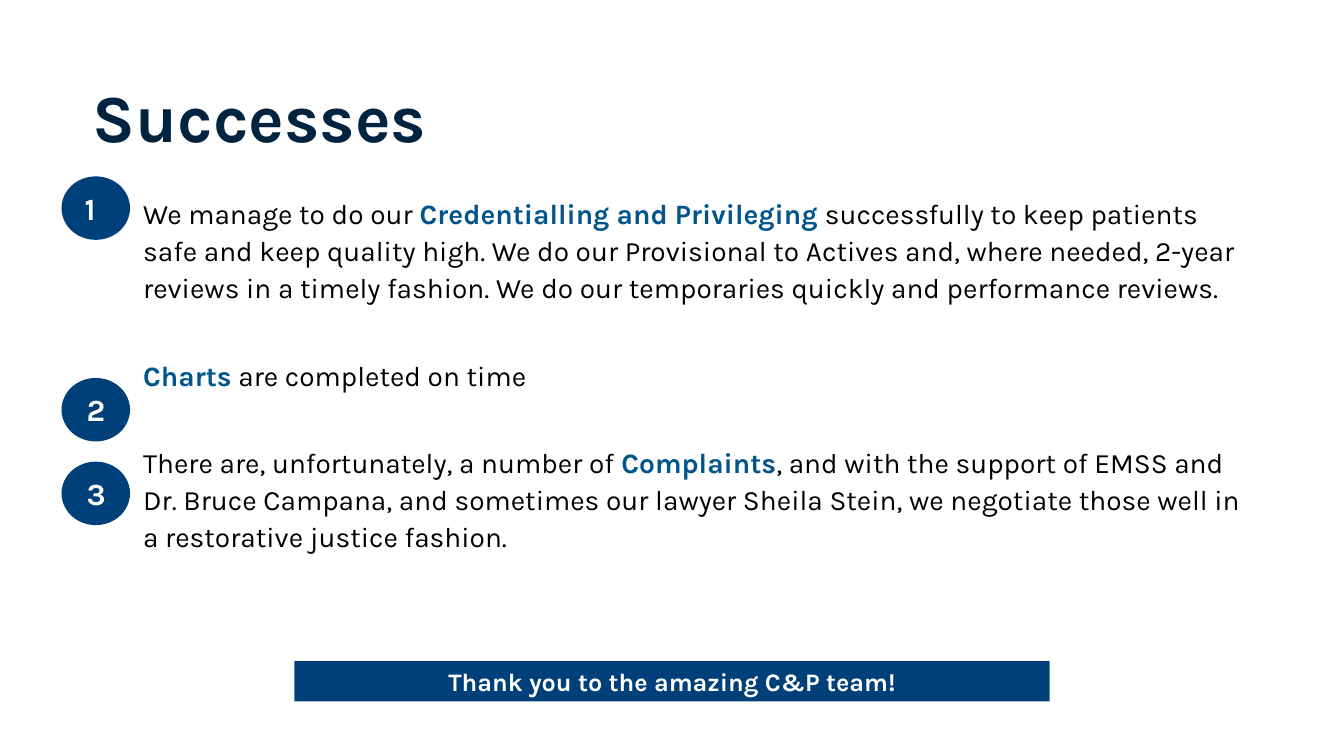
from pptx import Presentation
from pptx.dml.color import RGBColor
from pptx.enum.shapes import MSO_SHAPE
from pptx.enum.text import MSO_ANCHOR, MSO_AUTO_SIZE, PP_ALIGN
from pptx.util import Inches, Pt

RECT, OVAL = MSO_SHAPE.RECTANGLE, MSO_SHAPE.OVAL
TOP, MIDDLE, BOTTOM = MSO_ANCHOR.TOP, MSO_ANCHOR.MIDDLE, MSO_ANCHOR.BOTTOM
LEFT, CENTER = PP_ALIGN.LEFT, PP_ALIGN.CENTER
NO_AUTOFIT = MSO_AUTO_SIZE.NONE

FONT = "Karla"
NAVY, BLUE, INK = "00407A", "00558C", "002440"
BLACK, WHITE = "000000", "FFFFFF"

# Each paragraph is a list of (text, highlighted) runs
SUCCESSES = [
    [("We manage to do our ", False),
     ("Credentialling and Privileging", True),
     (" successfully to keep patients safe and keep quality high. "
      "We do our Provisional to Actives and, where needed, 2-year reviews "
      "in a timely fashion. We do our temporaries quickly and performance "
      "reviews.", False)],
    [("Charts", True), (" are completed on time", False)],
    [("There are, unfortunately, a number of ", False),
     ("Complaints", True),
     (", and with the support of EMSS and Dr. Bruce Campana, and sometimes "
      "our lawyer Sheila Stein, we negotiate those well in a restorative "
      "justice fashion.", False)],
]
# Number, top of its circle, left of its text
BADGES = [("1", 1.75, 0.74), ("2", 3.75, 0.76), ("3", 4.58, 0.76)]


def color(hex_string):
    return RGBColor.from_string(hex_string)


def add_run(p, text, size=20, fill=BLACK, bold=False):
    r = p.add_run()
    r.text = text
    r.font.name = FONT
    r.font.size = Pt(size)
    r.font.bold = bold
    r.font.color.rgb = color(fill)


def set_frame(tf, anchor=TOP, margins=None):
    tf.word_wrap = True
    tf.auto_size = NO_AUTOFIT
    tf.vertical_anchor = anchor
    if margins:
        (tf.margin_left, tf.margin_top,
         tf.margin_right, tf.margin_bottom) = map(Inches, margins)


def write(sp, text, align=LEFT, anchor=TOP, margins=None, **font):
    set_frame(sp.text_frame, anchor, margins)
    p = sp.text_frame.paragraphs[0]
    p.alignment = align
    add_run(p, text, **font)


def add_box(s, *box):
    return s.shapes.add_textbox(*map(Inches, box))


def add_filled(s, kind, *box):
    sp = s.shapes.add_shape(kind, *map(Inches, box))
    sp.shadow.inherit = False
    sp.fill.solid()
    sp.fill.fore_color.rgb = color(NAVY)
    sp.line.fill.background()
    return sp


def add_title(s, text):
    sp = s.shapes.title
    sp.left, sp.top, sp.width, sp.height = map(Inches, (0.92, 0.74, 11.5, 0.81))
    write(sp, text, anchor=BOTTOM, margins=(0, 0, 0, 0),
          size=48, fill=INK, bold=True)


def add_successes(s):
    tf = add_box(s, 0.92, 1.92, 11.5, 4.65).text_frame
    set_frame(tf, margins=(0.5, 0, 0, 0))
    for i, runs in enumerate(SUCCESSES):
        p = tf.add_paragraph() if i else tf.paragraphs[0]
        p.line_spacing = 1.1
        p.space_before = Pt(36 if i else 0)
        for text, highlighted in runs:
            add_run(p, text, fill=BLUE if highlighted else BLACK,
                    bold=highlighted)


def add_badge(s, number, top, text_left):
    add_filled(s, OVAL, 0.61, top, 0.68, 0.63)
    write(add_box(s, text_left, top + 0.08, 0.39, 0.47), number,
          size=22, fill=WHITE, bold=True)


def main():
    prs = Presentation()
    prs.slide_width, prs.slide_height = Inches(13.33), Inches(7.5)
    s = prs.slides.add_slide(prs.slide_layouts[5])

    # Title and text
    add_title(s, "Successes")
    add_successes(s)

    # Thank-you banner
    write(add_filled(s, RECT, 2.92, 6.56, 7.49, 0.4),
          "Thank you to the amazing C&P team!", align=CENTER, anchor=MIDDLE,
          size=18, fill=WHITE, bold=True)

    # Numbered circles
    for badge in BADGES:
        add_badge(s, *badge)

    prs.save("out.pptx")


if __name__ == "__main__":
    main()
